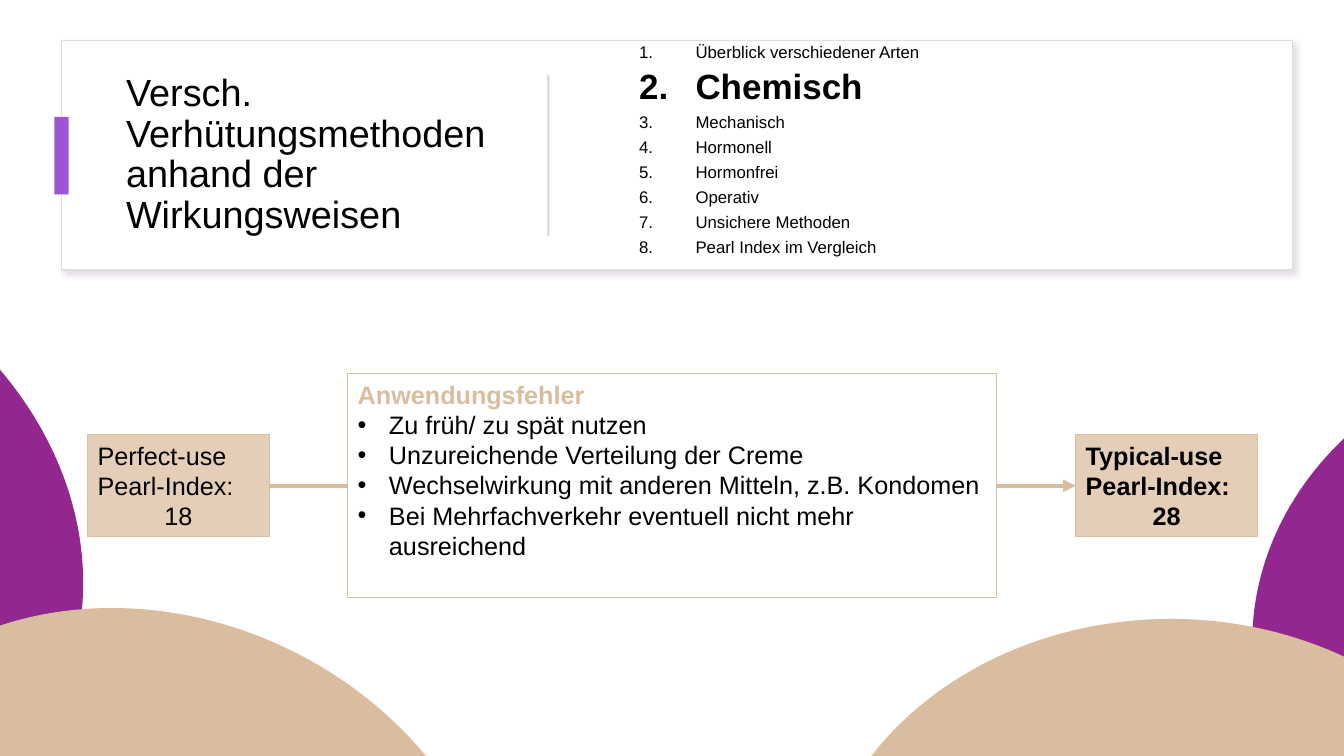
import dataclasses

import lxml.etree
import pptx
import pptx.dml.color
import pptx.enum.shapes
import pptx.enum.text
import pptx.oxml.ns
import pptx.util

KIND = pptx.enum.shapes.MSO_SHAPE
ALIGN = pptx.enum.text.PP_ALIGN
ANCHOR = pptx.enum.text.MSO_ANCHOR


@dataclasses.dataclass(frozen=True)
class Theme:
    font: str = "Arial"
    ink: str = "000000"
    white: str = "FFFFFF"
    edge: str = "DEDEDE"
    rule: str = "D5D5D5"
    shade: str = "CABECD"
    sand: str = "DABC9E"
    pale: str = "E4CEB7"
    plum: str = "92278F"
    violet: str = "9B57D3"
    head: int = 27
    focus: int = 25
    body: int = 18
    small: int = 12


def px(num):
    return pptx.util.Emu(num * 9144)


def rgb(code):
    return pptx.dml.color.RGBColor.from_string(code)


def child(node, tag, **attrs):
    item = lxml.etree.SubElement(node, pptx.oxml.ns.qn(tag))
    for key, value in attrs.items():
        item.set(key, str(value))
    return item


def write(frame, text, *, theme, size, color=None, bold=False, align=ALIGN.LEFT,
          mark=None, left=0, hang=0, lead=None, before=0):
    para = frame.paragraphs[0]
    if para.runs:
        para = frame.add_paragraph()
        para.space_before = pptx.util.Pt(before)
    para.alignment = align
    if lead:
        para.line_spacing = lead
    if mark:
        props = para._p.get_or_add_pPr()
        props.set("marL", str(px(left)))
        props.set("indent", str(-px(hang)))
        if mark == "1.":
            child(props, "a:buAutoNum", type="arabicPeriod")
        else:
            child(props, "a:buFont", typeface=theme.font)
            child(props, "a:buChar", char=mark)
    run = para.add_run()
    run.text = text
    run.font.name = theme.font
    run.font.size = pptx.util.Pt(size)
    run.font.bold = bold
    run.font.color.rgb = rgb(color or theme.ink)


class Deck:
    """Draw styled elements on the current slide."""

    def __init__(self, theme):
        self.theme = theme
        self.file = pptx.Presentation()
        self.file.slide_width = px(1333)
        self.file.slide_height = px(750)
        self.slide = self.file.slides.add_slide(self.file.slide_layouts[5])

    def frame(self, shape, anchor):
        frame = shape.text_frame
        frame.word_wrap = True
        frame.auto_size = pptx.enum.text.MSO_AUTO_SIZE.NONE
        frame.vertical_anchor = anchor
        return frame

    def title(self, text, place):
        shape = self.slide.shapes.title
        shape.left, shape.top, shape.width, shape.height = map(px, place)
        shape.element.getparent().append(shape.element)
        write(self.frame(shape, ANCHOR.MIDDLE), text, theme=self.theme,
              size=self.theme.head, lead=0.9)

    def shape(self, kind, place, fill, line=None, width=0.75, turn=0):
        shape = self.slide.shapes.add_shape(kind, *map(px, place))
        shape.shadow.inherit = False
        shape.rotation = turn
        shape.fill.solid()
        shape.fill.fore_color.rgb = rgb(fill)
        if line:
            shape.line.color.rgb = rgb(line)
            shape.line.width = pptx.util.Pt(width)
        else:
            shape.line.fill.background()
        return shape

    def card(self, place):
        shape = self.shape(KIND.RECTANGLE, place, self.theme.white, self.theme.edge, 1)
        effect = shape.element.spPr.find(pptx.oxml.ns.qn("a:effectLst"))
        shadow = child(effect, "a:outerShdw", blurRad=pptx.util.Pt(4),
                       dist=pptx.util.Pt(3), dir=45 * 60000, rotWithShape=0)
        color = child(shadow, "a:srgbClr", val=self.theme.shade)
        child(color, "a:alpha", val=50000)

    def arrow(self, start, end):
        line = self.slide.shapes.add_connector(
            pptx.enum.shapes.MSO_CONNECTOR.STRAIGHT, *map(px, start + end))
        line.line.color.rgb = rgb(self.theme.sand)
        line.line.width = pptx.util.Pt(3)
        child(line.line._get_or_add_ln(), "a:tailEnd", type="triangle")
        child(line.element.spPr, "a:effectLst")

    def agenda(self, items, focus, place):
        shape = self.slide.shapes.add_textbox(*map(px, place))
        frame = self.frame(shape, ANCHOR.MIDDLE)
        for item in items:
            hot = item == focus
            write(frame, item, theme=self.theme, bold=hot, mark="1.", left=106,
                  size=self.theme.focus if hot else self.theme.small,
                  hang=56, lead=0.9, before=5)

    def panel(self, head, items, place):
        shape = self.shape(KIND.RECTANGLE, place, self.theme.white, self.theme.sand)
        frame = self.frame(shape, ANCHOR.TOP)
        write(frame, head, theme=self.theme, size=self.theme.body,
              color=self.theme.sand, bold=True)
        for item in items:
            write(frame, item, theme=self.theme, size=self.theme.body,
                  mark="•", left=31, hang=31)

    def index(self, label, value, place, bold):
        shape = self.shape(KIND.RECTANGLE, place, self.theme.pale, self.theme.sand)
        frame = self.frame(shape, ANCHOR.MIDDLE)
        for text, align in ((label, ALIGN.LEFT), (value, ALIGN.CENTER)):
            write(frame, text, theme=self.theme, size=self.theme.body,
                  bold=bold, align=align)


def main():
    theme = Theme()
    deck = Deck(theme)
    deck.card((61, 40, 1221, 228))
    deck.arrow((267, 482), (1067, 482))
    deck.title("Versch. Verhütungsmethoden anhand der Wirkungsweisen",
               (115, 64, 400, 180))
    deck.shape(KIND.RECTANGLE, (54, 116, 14, 77), theme.violet)
    deck.shape(KIND.RECTANGLE, (543, 74, 2, 160), theme.rule)
    deck.agenda(("Überblick verschiedener Arten", "Chemisch", "Mechanisch",
                 "Hormonell", "Hormonfrei", "Operativ", "Unsichere Methoden",
                 "Pearl Index im Vergleich"), "Chemisch", (574, 40, 668, 219))
    deck.panel("Anwendungsfehler", (
        "Zu früh/ zu spät nutzen",
        "Unzureichende Verteilung der Creme",
        "Wechselwirkung mit anderen Mitteln, z.B. Kondomen",
        "Bei Mehrfachverkehr eventuell nicht mehr ausreichend",
    ), (345, 371, 643, 222))
    for label, value, left, bold in (("Perfect-use Pearl-Index:", "18", 87, False),
                                     ("Typical-use Pearl-Index:", "28", 1067, True)):
        deck.index(label, value, (left, 431, 180, 101), bold)
    for left, top, color, turn in ((1242, 334, theme.plum, 0),
                                   (805, 614, theme.sand, 0),
                                   (-621, 235, theme.plum, 25.9),
                                   (-202, 614, theme.sand, 25.9)):
        deck.shape(KIND.OVAL, (left, top, 713, 607), color, turn=turn)
    deck.file.save("out.pptx")


if __name__ == "__main__":
    main()
